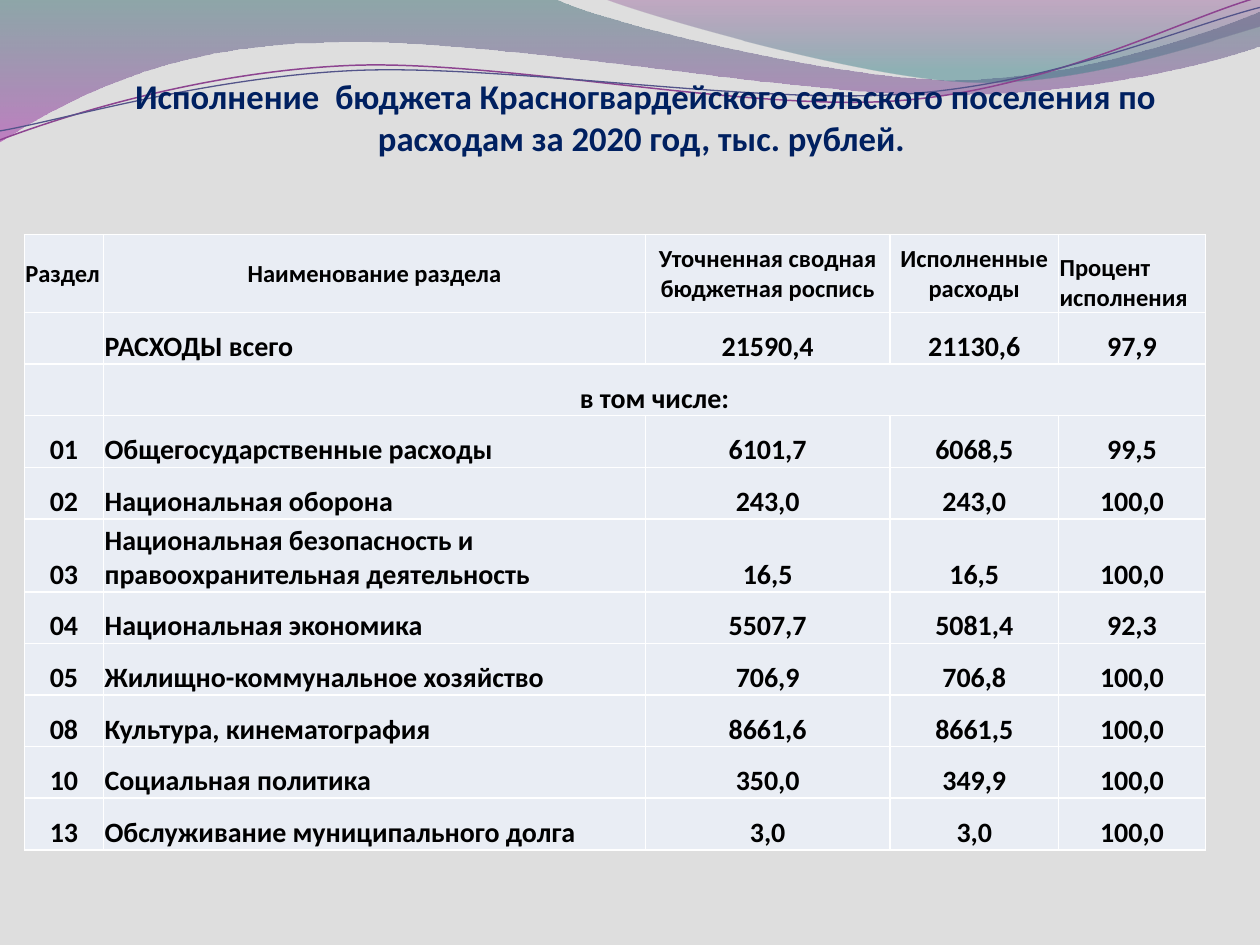
from math import cos, radians, sin
from typing import NamedTuple

from lxml import etree
from pptx import Presentation
from pptx.dml.color import RGBColor
from pptx.enum.text import MSO_ANCHOR, PP_ALIGN
from pptx.oxml.ns import qn
from pptx.util import Cm, Pt

LEFT, CENTER = PP_ALIGN.LEFT, PP_ALIGN.CENTER
MIDDLE, BOTTOM = MSO_ANCHOR.MIDDLE, MSO_ANCHOR.BOTTOM
FONT = "Calibri"
TILT = 2.7
BORDERS = ("a:lnL", "a:lnR", "a:lnT", "a:lnB")


class Stop(NamedTuple):
    position: float
    color: str
    alpha: int


class Wave(NamedTuple):
    start: tuple
    segments: list
    stops: tuple


class Strand(NamedTuple):
    start: tuple
    segments: list
    center: tuple
    color: str
    width: float


class Row(NamedTuple):
    code: str
    name: str
    plan: str
    actual: str
    percent: str


WAVES = [
    Wave((0, -0.03), [
        [(11.18, -0.03)],
        [(12.09, 0.43), (16.87, 1.6), (19.25, 1.6)],
        [(21.67, 1.6), (24.33, 0.66), (25.4, 0.23)],
        [(25.43, 0.91)],
        [(24.97, 1.12), (22.1, 1.93), (18.95, 1.91)],
        [(15.8, 1.91), (9.7, 0.71), (6.53, 0.86)],
        [(3.28, 0.89), (1.17, 2.11), (-0.03, 2.87)],
    ], (Stop(0, "2D6368", 45), Stop(1, "A530A9", 55))),
    Wave((12.17, -0.03), [
        [(12.93, 0.28), (17.32, 1.57), (19.53, 1.65)],
        [(21.74, 1.75), (24.41, 0.81), (25.4, 0.53)],
        [(25.4, 0)],
    ], (Stop(0, "7F2F82", 30), Stop(0.8, "2F7B82", 45))),
]
STRANDS = [
    Strand((0, 2.82), [
        [(1.22, 2.36), (4.01, 1.45), (7.04, 1.32)],
        [(10.03, 1.19), (15.06, 2.26), (18.11, 2.03)],
        [(21.16, 1.8), (23.83, 0.38), (25.35, -0.05)],
    ], (12.67, 1.46), "8D4490", 0.85),
    Strand((0, 2.64), [
        [(1.19, 2.44), (4.17, 1.55), (7.19, 1.42)],
        [(10.24, 1.3), (15.16, 2.11), (18.21, 1.9)],
        [(21.23, 1.7), (23.9, 0.53), (25.4, 0.15)],
    ], (12.69, 1.5), "53548A", 0.75),
]
TITLE = ("Исполнение  бюджета Красногвардейского сельского поселения "
         "по расходам за 2020 год, тыс. рублей. ")
COLUMNS = (1.6, 10.92, 4.93, 3.4, 2.96)
HEADER_HEIGHT, ROW_HEIGHT, TALL_HEIGHT = 1.57, 1.04, 1.47
SUBHEAD, TALL = 2, 5
ROWS = [
    Row("Раздел", "Наименование раздела", "Уточненная сводная бюджетная роспись",
        "Исполненные расходы", "Процент исполнения"),
    Row("", "РАСХОДЫ всего", "21590,4", "21130,6", "97,9"),
    Row("", "в том числе:", "", "", ""),
    Row("01", "Общегосударственные расходы", "6101,7", "6068,5", "99,5"),
    Row("02", "Национальная оборона", "243,0", "243,0", "100,0"),
    Row("03", "Национальная безопасность и правоохранительная деятельность",
        "16,5", "16,5", "100,0"),
    Row("04", "Национальная экономика", "5507,7", "5081,4", "92,3"),
    Row("05", "Жилищно-коммунальное хозяйство", "706,9", "706,8", "100,0"),
    Row("08", "Культура, кинематография", "8661,6", "8661,5", "100,0"),
    Row("10", "Социальная политика", "350,0", "349,9", "100,0"),
    Row("13", "Обслуживание муниципального долга", "3,0", "3,0", "100,0"),
]


def rgb(color: str) -> RGBColor:
    """Turn a hex string into a colour."""
    return RGBColor.from_string(color)


def turn(point: tuple, center: tuple) -> tuple:
    """Turn a point clockwise around a center by the tilt."""
    dx, dy = point[0] - center[0], point[1] - center[1]
    c, d = cos(radians(TILT)), sin(radians(TILT))
    return center[0] + dx * c - dy * d, center[1] + dx * d + dy * c


def add_outline(s, start: tuple, segments: list, close: bool):
    """Build a freeform of straight and cubic segments without shadow."""
    points = [(Cm(x), Cm(y)) for segment in segments for x, y in segment]
    builder = s.shapes.build_freeform(Cm(start[0]), Cm(start[1]))
    builder.add_line_segments(points, close=close)
    sp = builder.convert_to_shape()
    sp.shadow.inherit = False
    lines = iter(list(sp._element.spPr.iter(qn("a:lnTo"))))
    for segment in segments:
        first, *rest = [next(lines) for _ in segment]
        if rest:
            curve = etree.Element(qn("a:cubicBezTo"))
            first.addprevious(curve)
            for line in (first, *rest):
                curve.append(line[0])
                line.getparent().remove(line)
    return sp


def add_wave(s, wave: Wave) -> None:
    """Draw a band with a translucent downward gradient."""
    sp = add_outline(s, wave.start, wave.segments, True)
    sp.line.fill.background()
    sp.fill.gradient()
    sp.fill.gradient_angle = 270
    for target, stop in zip(sp.fill.gradient_stops, wave.stops):
        target.position = stop.position
        target.color.rgb = rgb(stop.color)
    for node, stop in zip(sp._element.spPr.iter(qn("a:srgbClr")), wave.stops):
        etree.SubElement(node, qn("a:alpha")).set("val", str(stop.alpha * 1000))


def add_strand(s, strand: Strand) -> None:
    """Draw a thin, tilted curved line."""
    segments = [[turn(point, strand.center) for point in segment]
                for segment in strand.segments]
    sp = add_outline(s, turn(strand.start, strand.center), segments, False)
    sp.rotation = -TILT
    sp.fill.background()
    sp.line.color.rgb = rgb(strand.color)
    sp.line.width = Pt(strand.width)


def add_text(tf, text: str, size: float, color: str, align: PP_ALIGN) -> None:
    """Write one bold run into the first paragraph."""
    p = tf.paragraphs[0]
    p.alignment = align
    r = p.add_run()
    r.text = text
    r.font.name, r.font.size, r.font.bold = FONT, Pt(size), True
    r.font.color.rgb = rgb(color)


def add_title(s) -> None:
    """Place the slide heading."""
    tf = s.shapes.add_textbox(Cm(1.3), Cm(1.52), Cm(23.42), Cm(2.72)).text_frame
    tf.word_wrap = True
    tf.vertical_anchor = BOTTOM
    tf.margin_left = tf.margin_right = tf.margin_top = 0
    tf.margin_bottom = Cm(1.05)
    add_text(tf, TITLE, 19.8, "002060", CENTER)


def style_cell(cell) -> None:
    """Set the fill, margins and white borders of a cell."""
    cell.margin_left = cell.margin_right = cell.margin_top = Cm(0.02)
    cell.margin_bottom = 0
    tcPr = cell._tc.get_or_add_tcPr()
    for tag in BORDERS:
        ln = etree.SubElement(tcPr, qn(tag), w=str(Pt(1)))
        fill = etree.SubElement(ln, qn("a:solidFill"))
        etree.SubElement(fill, qn("a:srgbClr"), val="FFFFFF")
    cell.fill.solid()
    cell.fill.fore_color.rgb = rgb("E9EDF4")


def add_budget_table(s) -> None:
    """Draw the table of budget spending."""
    heights = [ROW_HEIGHT] * len(ROWS)
    heights[0], heights[TALL] = HEADER_HEIGHT, TALL_HEIGHT
    table = s.shapes.add_table(len(ROWS), len(COLUMNS), Cm(0.49), Cm(4.73),
                               Cm(sum(COLUMNS)), Cm(sum(heights))).table
    for column, width in zip(table.columns, COLUMNS):
        column.width = Cm(width)
    for i, (row, height) in enumerate(zip(ROWS, heights)):
        table.rows[i].height = Cm(height)
        for j, text in enumerate(row):
            cell = table.cell(i, j)
            style_cell(cell)
            left = j in (0, 4) if i == 0 else j == 1 and i != SUBHEAD
            cell.vertical_anchor = MIDDLE if i == 0 and j < 4 else BOTTOM
            if text:
                add_text(cell.text_frame, text, 16 if i else 14, "000000",
                         LEFT if left else CENTER)
    table.cell(SUBHEAD, 1).merge(table.cell(SUBHEAD, 4))


def main() -> None:
    """Build the slide and save it."""
    prs = Presentation()
    prs.slide_width, prs.slide_height = Cm(25.4), Cm(19.05)
    s = prs.slides.add_slide(prs.slide_layouts[6])
    s.background.fill.solid()
    s.background.fill.fore_color.rgb = rgb("DEDEDE")
    for wave in WAVES:
        add_wave(s, wave)
    for strand in STRANDS:
        add_strand(s, strand)
    add_title(s)
    add_budget_table(s)
    prs.save("out.pptx")


if __name__ == "__main__":
    main()
